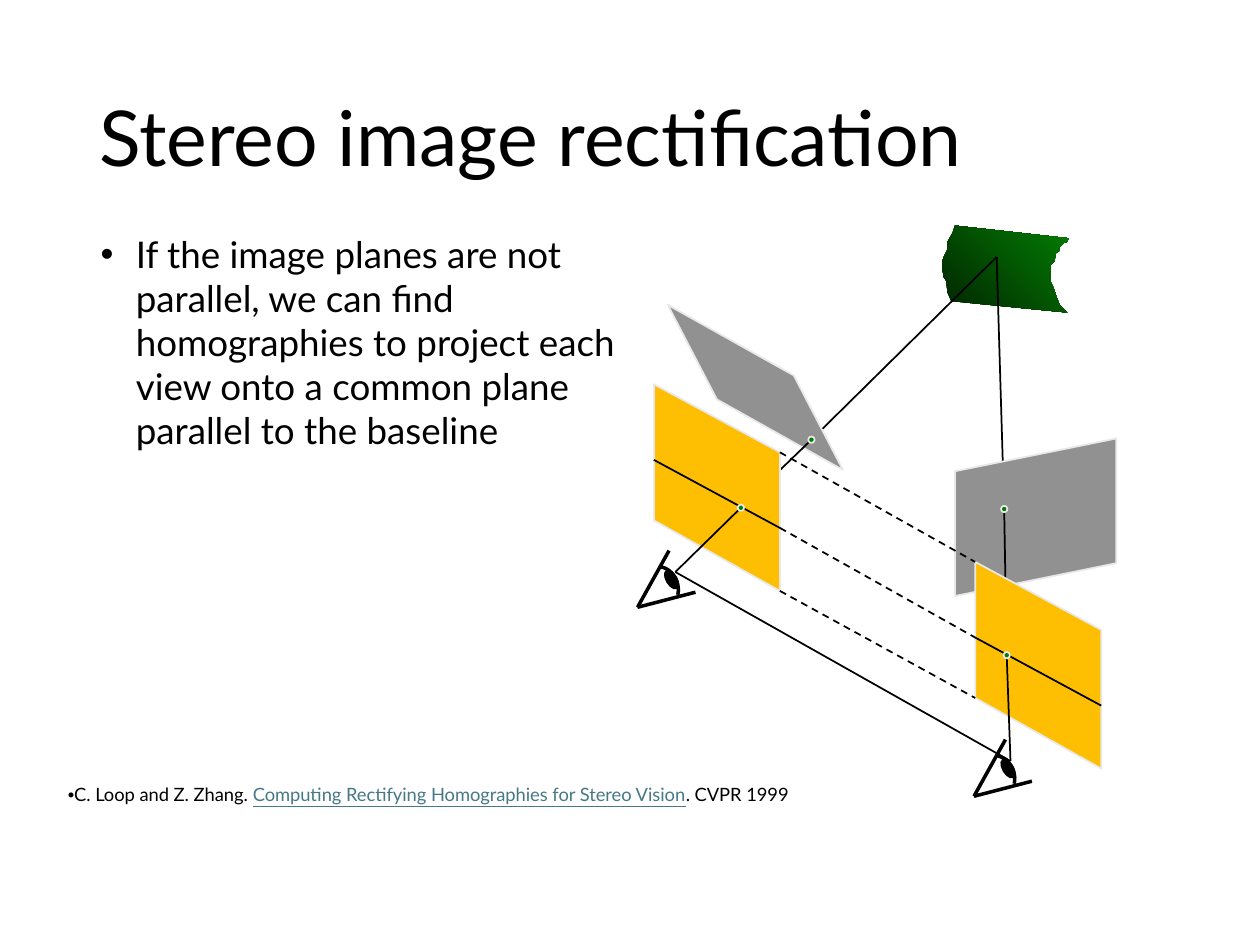
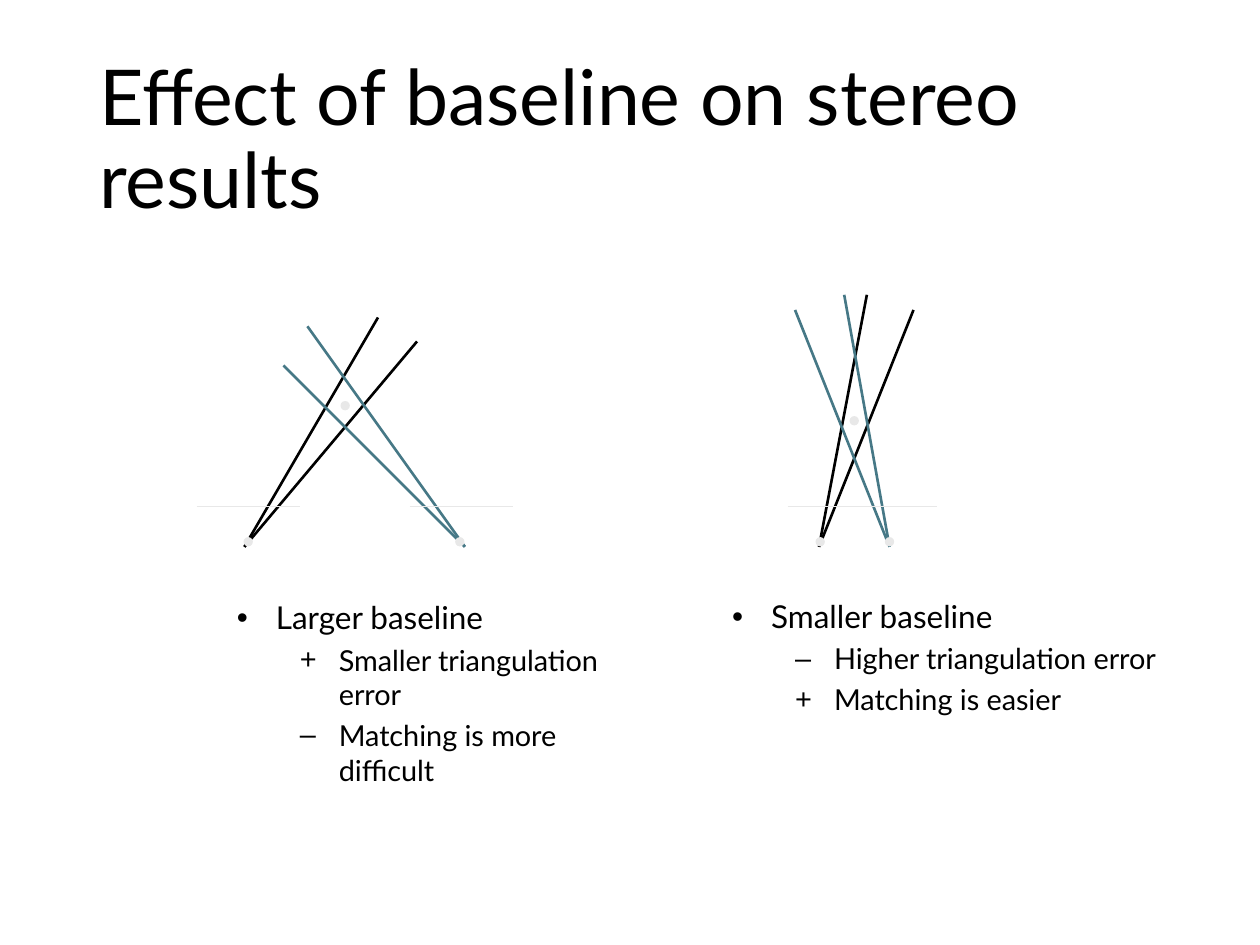
from dataclasses import dataclass

from lxml import etree
from pptx import Presentation
from pptx import util as u
from pptx.dml.color import RGBColor
from pptx.enum import dml, shapes, text
from pptx.oxml import ns


@dataclass(frozen=True)
class Theme:
    font: str = "Lato"
    ink: str = "000000"
    link: str = "467886"
    pale: str = "E8E8E8"
    grey: str = "919191"
    amber: str = "FEBF02"
    green: str = "037C03"
    dark_green: str = "012501"
    title_size: float = 44
    body_size: float = 21
    head_size: float = 18
    point_size: float = 16.5
    note_size: float = 10.5
    thin: float = 1
    medium: float = 1.5
    thick: float = 2


THEME = Theme()
WIDTH, HEIGHT = 10, 7.5
TITLE_AREA = (0.69, 0.4, 8.62, 1.45)

# Content: rectification
RECTIFICATION = "Stereo image rectification"
EXPLANATION = ("If the image planes are not parallel, we can find homographies "
               "to project each view onto a common plane parallel to the baseline")
CITATION = [("C. Loop and Z. Zhang. ", False),
            ("Computing Rectifying Homographies for Stereo Vision", True),
            (". CVPR 1999", False)]

SURFACE = [
    (7.58, 1.79), (7.56, 1.85), (7.52, 1.92), (7.52, 1.98), (7.49, 2.04),
    (7.48, 2.07), (7.48, 2.14), (7.49, 2.2), (7.51, 2.23), (7.52, 2.32),
    (7.55, 2.39), (8.47, 2.48), (8.41, 2.42), (8.38, 2.34), (8.36, 2.28),
    (8.34, 2.24), (8.34, 2.1), (8.37, 2.07), (8.38, 2.01), (8.41, 1.99),
    (8.41, 1.96), (8.44, 1.93), (8.47, 1.92), (8.48, 1.89)]
LEFT_VIEW = [(5.69, 3.17), (6.69, 3.73), (6.3, 2.98), (5.3, 2.42)]
RIGHT_VIEW = [(7.58, 3.74), (7.58, 4.73), (8.86, 4.47), (8.86, 3.48)]

SCENE_POINT = (7.91, 2.04)
LEFT_CENTRE, RIGHT_CENTRE = (5.36, 4.54), (8.02, 6.04)
LEFT_HIT, RIGHT_HIT = (6.44, 3.49), (7.97, 4.04)
LEFT_RECTIFIED_HIT, RIGHT_RECTIFIED_HIT = (5.88, 4.03), (7.99, 5.2)

# Rectified planes: corner, and drops of each row at the left and right edges
PLANE_CORNERS = [(5.19, 3.05), (7.74, 4.46)]
PLANE_WIDTH = 1
PLANE_ROWS = {"top": (0, 0.54), "epipolar": (0.6, 1.14), "bottom": (1.08, 1.64)}

# Eyes: parts measured from the corner of the lids
EYE_CORNERS = [(5.06, 4.82), (7.73, 6.32)]
LID_ENDS = [(0.25, -0.45), (0.46, -0.12)]
CORNEA = [(0.19, -0.32), (0.28, -0.3), (0.34, -0.2), (0.32, -0.1)]
PUPIL = (0.23, -0.3, 0.08, 0.16)
PUPIL_TURN = 329

# Content: baseline
BASELINE = "Effect of baseline on stereo results"
SETUPS = [
    {"centres": [(1.94, 4.34), (3.69, 4.34)],
     "ray_ends": [[(3, 2.52), (3.31, 2.71)], [(2.44, 2.59), (2.25, 2.9)]],
     "images": [1.56, 3.25],
     "dots": [(1.97, 4.3), (3.65, 4.3), (2.74, 3.22)],
     "area": (1.31, 4.71, 3.93, 2),
     "head": "Larger baseline",
     "points": [("+", "Smaller triangulation error"),
                ("–", "Matching is more difficult")]},
    {"centres": [(6.5, 4.34), (7.06, 4.34)],
     "ray_ends": [[(7.25, 2.46), (6.88, 2.34)], [(6.7, 2.34), (6.31, 2.46)]],
     "images": [6.25, 6.62],
     "dots": [(6.51, 4.3), (7.06, 4.3), (6.78, 3.34)],
     "area": (5.24, 4.7, 4.41, 2),
     "head": "Smaller baseline",
     "points": [("–", "Higher triangulation error"),
                ("+", "Matching is easier")]},
]
IMAGE_LEVEL, IMAGE_WIDTH = 4.02, 0.82


# Drawing helpers
def rgb(value):
    return RGBColor.from_string(value)


def shift(origin, offset):
    return origin[0] + offset[0], origin[1] + offset[1]


def style(shape, fill=None, line=None, weight=THEME.thin):
    shape.shadow.inherit = False
    if fill:
        shape.fill.solid()
        shape.fill.fore_color.rgb = rgb(fill)
    else:
        shape.fill.background()
    if line:
        shape.line.color.rgb = rgb(line)
        shape.line.width = u.Pt(weight)
    else:
        shape.line.fill.background()
    return shape


def add_line(page, start, end, color=THEME.ink, weight=THEME.thin, dashed=False):
    line = page.shapes.add_connector(
        shapes.MSO_CONNECTOR.STRAIGHT, *[u.Inches(v) for v in (*start, *end)])
    line.line.color.rgb = rgb(color)
    line.line.width = u.Pt(weight)
    if dashed:
        line.line.dash_style = dml.MSO_LINE.DASH
    etree.SubElement(line._element.spPr, ns.qn("a:effectLst"))


def add_outline(page, points, close=True, **look):
    corners = [(u.Inches(x), u.Inches(y)) for x, y in points]
    builder = page.shapes.build_freeform(*corners[0], scale=1.0)
    builder.add_line_segments(corners[1:], close=close)
    return style(builder.convert_to_shape(), **look)


def add_oval(page, left, top, width, height, **look):
    oval = page.shapes.add_shape(
        shapes.MSO_SHAPE.OVAL, *[u.Inches(v) for v in (left, top, width, height)])
    return style(oval, **look)


def add_dot(page, centre, size, fill):
    x, y = centre
    add_oval(page, x - size / 2, y - size / 2, size, size,
             fill=fill, line=THEME.pale)


def add_box(page, area, insets=(0.1, 0.05)):
    box = page.shapes.add_textbox(*[u.Inches(v) for v in area])
    frame = box.text_frame
    frame.word_wrap = True
    frame.margin_left = frame.margin_right = u.Inches(insets[0])
    frame.margin_top = frame.margin_bottom = u.Inches(insets[1])
    return frame


def add_span(para, words, size, color=THEME.ink, underline=None):
    span = para.add_run()
    span.text = words
    font = span.font
    font.name, font.size, font.underline = THEME.font, u.Pt(size), underline
    font.color.rgb = rgb(color)


def set_bullet(para, mark, margin=0, hanging=0):
    props = para._p.get_or_add_pPr()
    props.set("marL", str(u.Inches(margin)))
    props.set("indent", str(-u.Inches(hanging)))
    etree.SubElement(props, ns.qn("a:buFont")).set("typeface", "Arial")
    etree.SubElement(props, ns.qn("a:buChar")).set("char", mark)


def add_page(deck, title):
    page = deck.slides.add_slide(deck.slide_layouts[6])
    frame = add_box(page, TITLE_AREA)
    frame.vertical_anchor = text.MSO_ANCHOR.MIDDLE
    para = frame.paragraphs[0]
    para.line_spacing = 0.9
    add_span(para, title, THEME.title_size)
    return page


# Rectification page
def bezier(points, steps=12):
    a, b, c, d = points
    for step in range(steps + 1):
        t = step / steps
        s = 1 - t
        yield tuple(s**3 * a[i] + 3 * s * s * t * b[i] + 3 * s * t * t * c[i]
                    + t**3 * d[i] for i in (0, 1))


def add_eye(page, corner):
    curve = [shift(corner, point) for point in bezier(CORNEA)]
    add_outline(page, curve, close=False, line=THEME.ink, weight=THEME.thick)
    for end in LID_ENDS:
        add_line(page, corner, shift(corner, end), weight=THEME.thick)
    left, top = shift(corner, PUPIL[:2])
    pupil = add_oval(page, left, top, *PUPIL[2:], fill=THEME.ink, line=THEME.ink)
    pupil.rotation = PUPIL_TURN


def row_ends(corner, row):
    left_drop, right_drop = PLANE_ROWS[row]
    return shift(corner, (0, left_drop)), shift(corner, (PLANE_WIDTH, right_drop))


def add_rectified_plane(page, corner):
    top, bottom = row_ends(corner, "top"), row_ends(corner, "bottom")
    add_outline(page, [*top, *reversed(bottom)], fill=THEME.amber, line=THEME.pale)


def build_rectification(deck):
    page = add_page(deck, RECTIFICATION)
    left_plane, right_plane = PLANE_CORNERS

    # Surface, baseline, and planes in front of the rays
    surface = add_outline(page, SURFACE)
    surface.fill.gradient()
    surface.fill.gradient_angle = 45
    for stop, color in zip(surface.fill.gradient_stops,
                           (THEME.dark_green, THEME.green)):
        stop.color.rgb = rgb(color)
    add_line(page, LEFT_CENTRE, RIGHT_CENTRE)
    add_line(page, LEFT_HIT, SCENE_POINT)
    add_outline(page, LEFT_VIEW, fill=THEME.grey, line=THEME.pale)
    add_line(page, RIGHT_HIT, SCENE_POINT)
    add_line(page, LEFT_RECTIFIED_HIT, LEFT_HIT)
    add_rectified_plane(page, left_plane)
    add_outline(page, RIGHT_VIEW, fill=THEME.grey, line=THEME.pale)
    add_line(page, RIGHT_RECTIFIED_HIT, RIGHT_HIT)
    add_rectified_plane(page, right_plane)
    add_line(page, LEFT_CENTRE, LEFT_RECTIFIED_HIT)
    add_line(page, RIGHT_CENTRE, RIGHT_RECTIFIED_HIT)

    # Rows shared by both rectified planes
    for row in PLANE_ROWS:
        add_line(page, row_ends(left_plane, row)[1], row_ends(right_plane, row)[0],
                 dashed=True)
    for corner in PLANE_CORNERS:
        add_line(page, *row_ends(corner, "epipolar"))
    for hit in (LEFT_HIT, (7.97, 4.04), LEFT_RECTIFIED_HIT, RIGHT_RECTIFIED_HIT):
        add_dot(page, hit, 0.05, THEME.green)
    for corner in EYE_CORNERS:
        add_eye(page, corner)

    # Explanation and citation
    para = add_box(page, (0.7, 1.79, 4.84, 1.87)).paragraphs[0]
    set_bullet(para, "•", 0.28, 0.28)
    add_span(para, EXPLANATION, THEME.body_size)
    para = add_box(page, (0.44, 6.19, 6.06, 0.33)).paragraphs[0]
    set_bullet(para, "•")
    para.line_spacing = 0.9
    for words, linked in CITATION:
        add_span(para, words, THEME.note_size,
                 THEME.link if linked else THEME.ink, linked or None)


# Baseline page
def add_setup(page, setup):
    for centre, ends, color in zip(setup["centres"], setup["ray_ends"],
                                   (THEME.ink, THEME.link)):
        for end in ends:
            add_line(page, centre, end, color, THEME.medium)
    for left in setup["images"]:
        add_line(page, (left, IMAGE_LEVEL), (left + IMAGE_WIDTH, IMAGE_LEVEL),
                 THEME.pale)
    for dot in setup["dots"]:
        add_dot(page, dot, 0.06, THEME.pale)

    frame = add_box(page, setup["area"], (0.07, 0.04))
    para = frame.paragraphs[0]
    set_bullet(para, "•", 0.81, 0.31)
    add_span(para, setup["head"], THEME.head_size)
    for mark, words in setup["points"]:
        para = frame.add_paragraph()
        para.level = 1
        set_bullet(para, mark, 1.31, 0.31)
        para.space_before = u.Pt(3.5)
        add_span(para, words, THEME.point_size)


def build_baseline(deck):
    page = add_page(deck, BASELINE)
    for setup in SETUPS:
        add_setup(page, setup)


def main():
    deck = Presentation()
    deck.slide_width, deck.slide_height = u.Inches(WIDTH), u.Inches(HEIGHT)
    build_rectification(deck)
    build_baseline(deck)
    deck.save("out.pptx")


if __name__ == "__main__":
    main()
